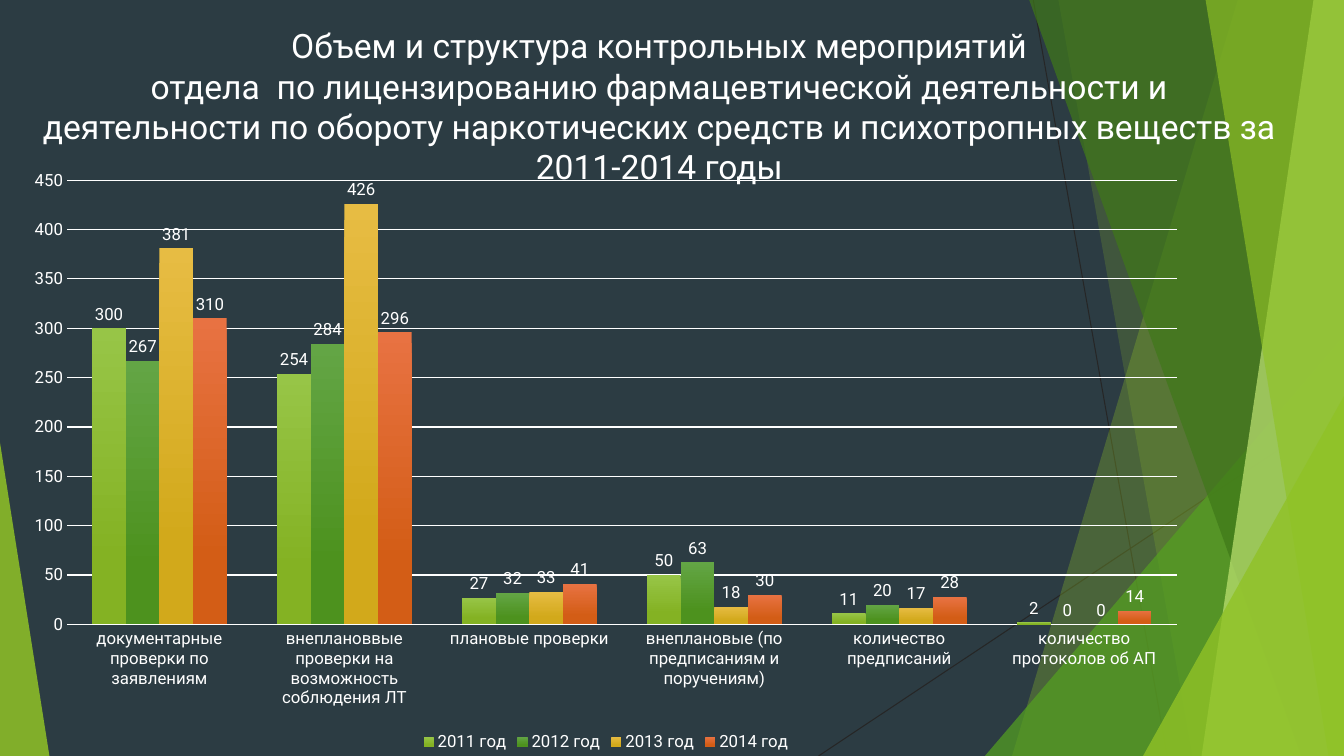
from lxml import etree
from pptx import Presentation
from pptx.chart.data import CategoryChartData
from pptx.dml.color import RGBColor
from pptx.enum.chart import XL_CHART_TYPE, XL_LABEL_POSITION, XL_LEGEND_POSITION, XL_TICK_MARK
from pptx.enum.shapes import MSO_CONNECTOR, MSO_SHAPE
from pptx.enum.text import PP_ALIGN
from pptx.oxml.ns import qn
from pptx.util import Inches, Pt

CLUSTERED = XL_CHART_TYPE.COLUMN_CLUSTERED
OUTSIDE = XL_LABEL_POSITION.OUTSIDE_END
BOTTOM = XL_LEGEND_POSITION.BOTTOM
NO_TICK = XL_TICK_MARK.NONE
STRAIGHT = MSO_CONNECTOR.STRAIGHT
TRIANGLE = MSO_SHAPE.ISOSCELES_TRIANGLE
CENTER = PP_ALIGN.CENTER

BACKGROUND = RGBColor(0x2C, 0x3C, 0x43)
WHITE = RGBColor(0xFF, 0xFF, 0xFF)
HAIRLINE = RGBColor(0x26, 0x26, 0x26)
LIME = RGBColor(0x90, 0xC2, 0x26)
GREEN = RGBColor(0x54, 0xA0, 0x21)
FOREST = RGBColor(0x3F, 0x78, 0x19)
PALE = RGBColor(0xC0, 0xE4, 0x74)

TITLE = (
    "Объем и структура контрольных мероприятий",
    "отдела  по лицензированию фармацевтической деятельности и деятельности "
    "по обороту наркотических средств и психотропных веществ за 2011-2014 годы",
)
CATEGORIES = (
    "документарные проверки по заявлениям",
    "внеплановвые проверки на возможность соблюдения ЛТ",
    "плановые проверки",
    "внеплановые (по предписаниям и поручениям)",
    "количество предписаний",
    "количество протоколов об АП",
)
SERIES = (
    ("2011 год", (300, 254, 27, 50, 11, 2), RGBColor(0x97, 0xC5, 0x47), RGBColor(0x84, 0xB2, 0x23)),
    ("2012 год", (267, 284, 32, 63, 20, 0), RGBColor(0x63, 0xA5, 0x45), RGBColor(0x4D, 0x92, 0x1E)),
    ("2013 год", (381, 426, 33, 18, 17, 0), RGBColor(0xE7, 0xBC, 0x43), RGBColor(0xD2, 0xA9, 0x1B)),
    ("2014 год", (310, 296, 41, 30, 28, 14), RGBColor(0xE8, 0x72, 0x42), RGBColor(0xD3, 0x5D, 0x16)),
)
PLOT_AREA = {"x": 0.047, "y": 0.037, "w": 0.933, "h": 0.743}


class SlideBuilder:
    """Draws styled elements on one slide, with lengths in percent of its size."""

    def __init__(self, presentation, font_name):
        self.width = presentation.slide_width
        self.height = presentation.slide_height
        self.font_name = font_name
        self.slide = presentation.slides.add_slide(presentation.slide_layouts[6])
        self.slide.background.fill.solid()
        self.slide.background.fill.fore_color.rgb = BACKGROUND

    def place(self, *shares):
        sizes = (self.width, self.height) * (len(shares) // 2)
        return [round(share * size / 100) for share, size in zip(shares, sizes)]

    def style_font(self, font, size=12, color=WHITE):
        font.name = self.font_name
        font.size = Pt(size)
        font.color.rgb = color

    def fill(self, shape, color, opacity):
        shape.shadow.inherit = False
        shape.line.fill.background()
        shape.fill.solid()
        shape.fill.fore_color.rgb = color
        color_element = shape.fill._xPr.find(qn("a:solidFill"))[0]
        etree.SubElement(color_element, qn("a:alpha"), val=str(opacity * 1000))

    def line(self, *ends):
        connector = self.slide.shapes.add_connector(STRAIGHT, *self.place(*ends))
        connector.line.color.rgb = HAIRLINE
        connector.line.width = Pt(0.75)
        etree.SubElement(connector._element.spPr, qn("a:effectLst"))

    def band(self, top_left, bottom_left, color, opacity):
        corners = ((100, 0), (100, 100), (bottom_left, 100))
        freeform = self.slide.shapes.build_freeform(*self.place(top_left, 0))
        freeform.add_line_segments([self.place(*corner) for corner in corners], close=True)
        self.fill(freeform.convert_to_shape(), color, opacity)

    def triangle(self, left, top, width, apex, color, opacity):
        shape = self.slide.shapes.add_shape(TRIANGLE, *self.place(left, top, width, 100 - top))
        shape.adjustments[0] = apex
        self.fill(shape, color, opacity)

    def text(self, paragraphs, box, size=12, color=WHITE, alignment=CENTER):
        frame = self.slide.shapes.add_textbox(*self.place(*box)).text_frame
        frame.word_wrap = True
        for index, content in enumerate(paragraphs):
            paragraph = frame.add_paragraph() if index else frame.paragraphs[0]
            paragraph.alignment = alignment
            run = paragraph.add_run()
            run.text = content
            self.style_font(run.font, size, color)

    def chart(self, categories, series_rows, box):
        data = CategoryChartData()
        data.categories = categories
        for name, values, *_ in series_rows:
            data.add_series(name, values)
        chart = self.slide.shapes.add_chart(CLUSTERED, *self.place(*box), data).chart
        self.style_font(chart.font, 10)
        chart.has_title = False
        chart.has_legend = True
        chart.legend.position = BOTTOM
        chart.legend.include_in_layout = False
        self.style_font(chart.legend.font)
        self.style_axes(chart)
        plot = chart.plots[0]
        plot.gap_width = 150
        plot.overlap = 0
        plot.vary_by_categories = False
        for series, (_, _, light, dark) in zip(plot.series, series_rows):
            self.style_series(series, light, dark)
        self.fix_plot_area(chart)

    def style_axes(self, chart):
        for axis in (chart.category_axis, chart.value_axis):
            axis.major_tick_mark = axis.minor_tick_mark = NO_TICK
            self.style_font(axis.tick_labels.font)
        chart.category_axis.format.line.color.rgb = WHITE
        chart.category_axis.format.line.width = Pt(1)
        values = chart.value_axis
        values.minimum_scale, values.maximum_scale, values.major_unit = 0, 450, 50
        values.format.line.fill.background()
        values.major_gridlines.format.line.color.rgb = WHITE
        values.major_gridlines.format.line.width = Pt(0.75)

    def style_series(self, series, light, dark):
        fill = series.format.fill
        fill.gradient()
        fill.gradient_angle = 270
        for stop, color, position in zip(fill.gradient_stops, (light, dark), (0, 0.78)):
            stop.color.rgb = color
            stop.position = position
        labels = series.data_labels
        labels.show_value = True
        labels.position = OUTSIDE
        self.style_font(labels.font)

    def fix_plot_area(self, chart):
        area = chart._chartSpace.chart.plotArea
        for old_layout in area.findall(qn("c:layout")):
            area.remove(old_layout)
        layout = etree.Element(qn("c:layout"))
        area.insert(0, layout)
        manual = etree.SubElement(layout, qn("c:manualLayout"))
        settings = {"layoutTarget": "inner", "xMode": "edge", "yMode": "edge", **PLOT_AREA}
        for name, value in settings.items():
            etree.SubElement(manual, qn(f"c:{name}"), val=str(value))


def main():
    presentation = Presentation()
    presentation.slide_width = Inches(13.33)
    presentation.slide_height = Inches(7.5)
    builder = SlideBuilder(presentation, "Roboto")
    builder.line(76.88, 0, 86.85, 100)
    builder.line(100, 53.73, 60.9, 100)
    builder.band(92.1, 75.3, LIME, 30)
    builder.band(78.75, 88.73, LIME, 20)
    builder.triangle(73.28, 44.4, 26.72, 1, GREEN, 72)
    builder.band(76.58, 96.83, FOREST, 70)
    builder.band(97.73, 89.4, PALE, 70)
    builder.band(89.7, 98.85, LIME, 65)
    builder.triangle(85.05, 52.4, 14.95, 1, LIME, 80)
    builder.triangle(0, 58.53, 3.68, 0, LIME, 85)
    builder.text(TITLE, (2.25, 2.67, 93.6, 17.47), size=24)
    builder.chart(CATEGORIES, SERIES, (0.83, 20.93, 88.5, 79.07))
    presentation.save("out.pptx")


if __name__ == "__main__":
    main()
